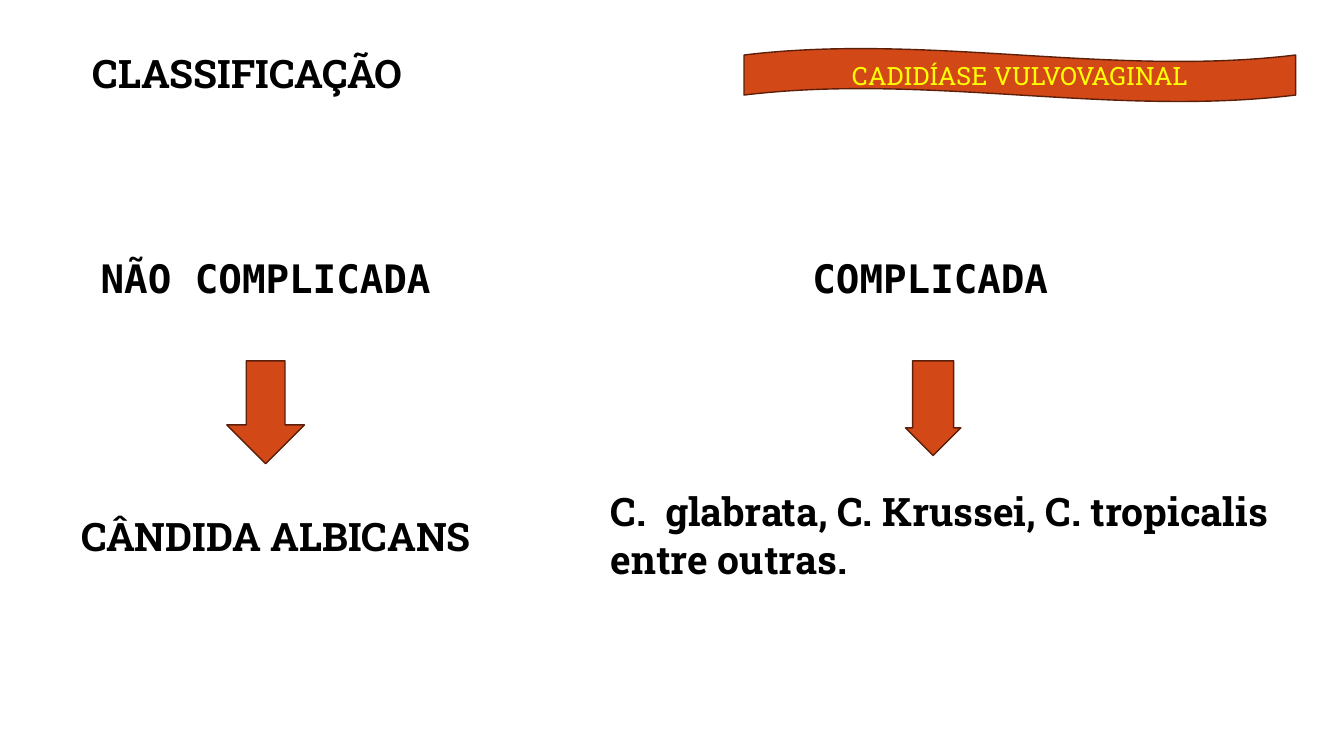
from pptx import Presentation
from pptx.dml.color import RGBColor
from pptx.enum import shapes, text
from pptx.util import Inches, Pt

COLORS = {"accent": "D34817", "outline": "5C200A", "banner": "FFFF00", "ink": "000000"}
SERIF, MONO = "Roboto Slab", "DejaVu Sans Mono"
LEFT, CENTER = text.PP_ALIGN.LEFT, text.PP_ALIGN.CENTER
HEADING_TOP, ARROW_TOP = 2.47, 3.58

TITLE = ("CLASSIFICAÇÃO", (0.82, 0.44, 5.14, 0.57))
BANNER = ("CADIDÍASE VULVOVAGINAL", (7.38, 0.48, 5.47, 0.53))
CLASSES = [
    {
        "heading": ("NÃO COMPLICADA", -0.39, 6.05, CENTER),
        "arrow": (2.25, 0.77, 1.02, 0.5),
        "species": ("CÂNDIDA ALBICANS", (0.71, 5.03, 4.95, 0.57)),
    },
    {
        "heading": ("COMPLICADA", 7.96, 5.17, LEFT),
        "arrow": (8.98, 0.55, 0.94, 0.74),
        "species": ("C.  glabrata, C. Krussei, C. tropicalis entre outras.",
                    (5.96, 4.79, 7.31, 1.04)),
    },
]


def inches(box):
    return [Inches(length) for length in box]


def write(holder, words, font=SERIF, size=28, color="ink", bold=True,
          align=LEFT, anchor=text.MSO_ANCHOR.TOP):
    frame = holder.text_frame
    frame.word_wrap = True
    frame.auto_size = text.MSO_AUTO_SIZE.NONE
    frame.vertical_anchor = anchor
    line = frame.paragraphs[0]
    line.alignment = align
    run = line.add_run()
    run.text = words
    run.font.name = font
    run.font.size = Pt(size)
    run.font.bold = bold
    run.font.color.rgb = RGBColor.from_string(COLORS[color])


def add_filled(slide, kind, box):
    filled = slide.shapes.add_shape(kind, *inches(box))
    filled.shadow.inherit = False
    filled.fill.solid()
    filled.fill.fore_color.rgb = RGBColor.from_string(COLORS["accent"])
    filled.line.color.rgb = RGBColor.from_string(COLORS["outline"])
    filled.line.width = Pt(1)
    return filled


def main():
    deck = Presentation()
    deck.slide_width, deck.slide_height = Inches(13.33), Inches(7.5)
    slide = deck.slides.add_slide(deck.slide_layouts[5])

    title = slide.shapes.title
    words, box = TITLE
    title.left, title.top, title.width, title.height = inches(box)
    write(title, words)

    words, box = BANNER
    banner = add_filled(slide, shapes.MSO_SHAPE.WAVE, box)
    write(banner, words, size=18, color="banner", bold=False,
          align=CENTER, anchor=text.MSO_ANCHOR.MIDDLE)

    for group in CLASSES:
        words, left, width, align = group["heading"]
        heading = slide.shapes.add_textbox(*inches((left, HEADING_TOP, width, 0.57)))
        write(heading, words, font=MONO, align=align)

        left, width, height, shaft = group["arrow"]
        arrow = add_filled(slide, shapes.MSO_SHAPE.DOWN_ARROW,
                           (left, ARROW_TOP, width, height))
        arrow.adjustments[0] = shaft

        words, box = group["species"]
        write(slide.shapes.add_textbox(*inches(box)), words)

    deck.save("out.pptx")


if __name__ == "__main__":
    main()
